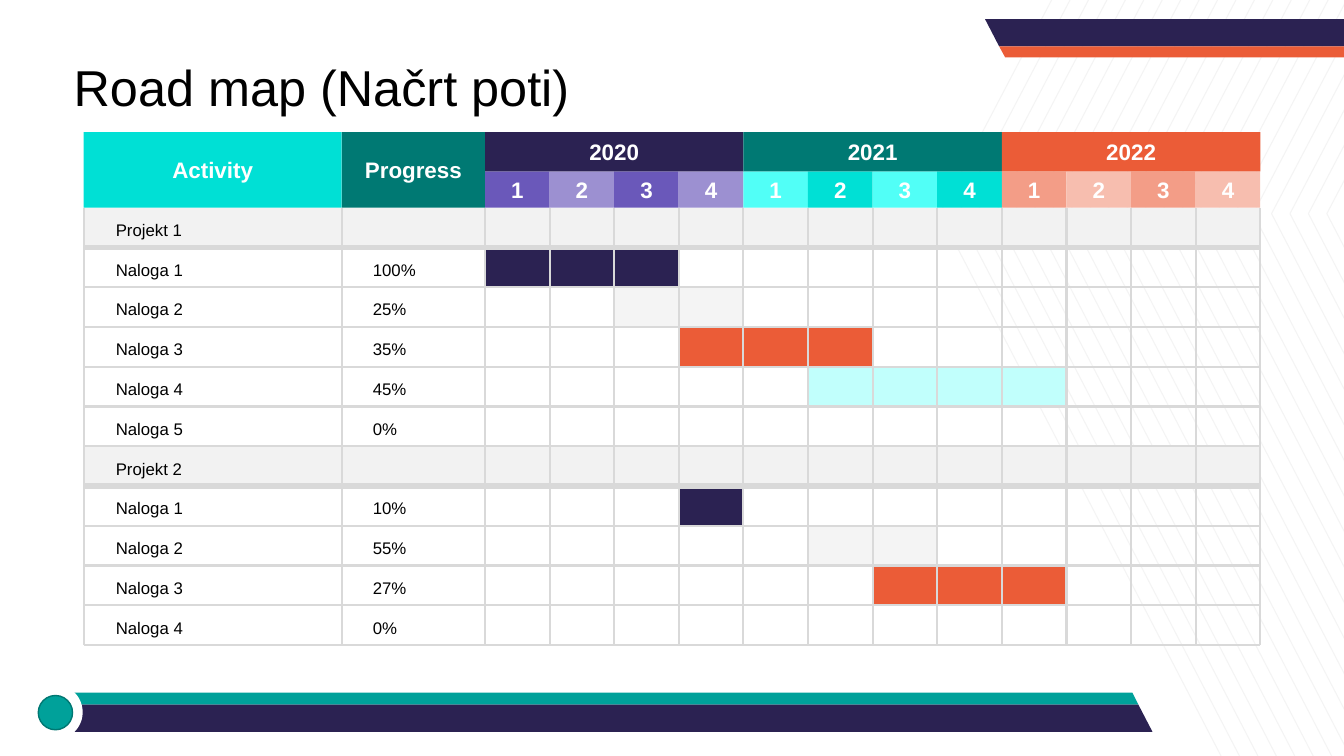
from lxml import etree
from pptx import Presentation
from pptx.dml.color import RGBColor
from pptx.enum import shapes, text
from pptx.oxml.ns import qn
from pptx.util import Inches, Pt

COLORS = {
    "white": "FFFFFF", "black": "000000", "navy": "2B2252", "orange": "EB5C37",
    "teal": "00A19A", "teal_edge": "007772", "dark_teal": "007973",
    "cyan": "00E0D5", "bright_cyan": "51FFF7", "pale_cyan": "C1FFFC",
    "violet": "6A58BA", "lilac": "9C90D1", "salmon": "F39D87", "peach": "F7BEAF",
    "pale_gray": "F4F4F4", "band": "F2F2F2", "grid": "D9D9D9",
}
RGB = {name: RGBColor.from_string(value) for name, value in COLORS.items()}

SLIDE_W, SLIDE_H = 13.33, 7.5
LEFT, PROGRESS_X, QUARTER_X, RIGHT = 0.83, 3.39, 4.81, 12.5
HEADER_TOP, QUARTER_TOP, BODY_TOP, BODY_BOTTOM = 1.31, 1.7, 2.06, 6.4
QUARTER_W = (RIGHT - QUARTER_X) / 12

# Activity, progress, bar colour, first quarter (0 to 11), number of quarters
ROWS = [
    ("Projekt 1", "", None, 0, 0),
    ("Naloga 1", "100%", "navy", 0, 3),
    ("Naloga 2", "25%", "pale_gray", 2, 2),
    ("Naloga 3", "35%", "orange", 3, 3),
    ("Naloga 4", "45%", "pale_cyan", 5, 4),
    ("Naloga 5", "0%", None, 0, 0),
    ("Projekt 2", "", None, 0, 0),
    ("Naloga 1", "10%", "navy", 3, 1),
    ("Naloga 2", "55%", "pale_gray", 5, 2),
    ("Naloga 3", "27%", "orange", 6, 3),
    ("Naloga 4", "0%", None, 0, 0),
]
YEARS = [
    ("2020", "navy", ("violet", "lilac")),
    ("2021", "dark_teal", ("bright_cyan", "cyan")),
    ("2022", "orange", ("salmon", "peach")),
]
ROW_H = (BODY_BOTTOM - BODY_TOP) / len(ROWS)

prs = Presentation()
prs.slide_width, prs.slide_height = Inches(SLIDE_W), Inches(SLIDE_H)
slide = prs.slides.add_slide(prs.slide_layouts[6])


def add_block(x, y, w, h, color, label="", kind=shapes.MSO_SHAPE.RECTANGLE):
    """Add a filled shape without outline, with an optional bold white label."""
    s = slide.shapes.add_shape(kind, Inches(x), Inches(y), Inches(w), Inches(h))
    s.shadow.inherit = False
    s.fill.solid()
    s.fill.fore_color.rgb = RGB[color]
    s.line.fill.background()
    if label:
        tf = s.text_frame
        tf.margin_left = tf.margin_right = tf.margin_top = tf.margin_bottom = 0
        tf.vertical_anchor = text.MSO_ANCHOR.MIDDLE
        tf.text = label
        p = tf.paragraphs[0]
        p.alignment = text.PP_ALIGN.CENTER
        f = p.runs[0].font
        f.name, f.size, f.bold, f.color.rgb = "Arial", Pt(16), True, RGB["white"]
    return s


def add_outline(points, closed):
    """Add a freeform through points given in inches."""
    points = [(Inches(x), Inches(y)) for x, y in points]
    builder = slide.shapes.build_freeform(*points[0], scale=1)
    builder.add_line_segments(points[1:], close=closed)
    s = builder.convert_to_shape()
    s.shadow.inherit = False
    return s


# Background chevrons, bleeding over the right edge of the slide
CHEVRONS, FIRST_X, LAST_X = 22, 9.32, 13.16
for i in range(CHEVRONS):
    x = FIRST_X + i * (LAST_X - FIRST_X) / (CHEVRONS - 1)
    s = add_outline([(x + 1.11, 0), (x, 2.12), (x + 2.79, SLIDE_H)], closed=False)
    s.fill.background()
    s.line.color.rgb = RGB["pale_gray"]
    s.line.width = Pt(0.75)

# Slanted ribbons at the top and bottom
for color, points in [
    ("teal", [(0.54, 6.87), (11.23, 6.87), (11.29, 6.99), (0.54, 6.99)]),
    ("navy", [(0.54, 6.99), (11.29, 6.99), (11.43, 7.26), (0.54, 7.26)]),
    ("navy", [(9.77, 0.19), (13.33, 0.19), (13.33, 0.46), (9.91, 0.46)]),
    ("orange", [(9.91, 0.46), (13.33, 0.46), (13.33, 0.57), (9.97, 0.57)]),
]:
    s = add_outline(points, closed=True)
    s.fill.solid()
    s.fill.fore_color.rgb = RGB[color]
    s.line.fill.background()

add_block(0.27, 6.79, 0.55, 0.55, "white", kind=shapes.MSO_SHAPE.OVAL)
dot = add_block(0.38, 6.9, 0.34, 0.34, "teal", kind=shapes.MSO_SHAPE.OVAL)
dot.line.color.rgb = RGB["teal_edge"]
dot.line.width = Pt(1)

# Project bands and task bars
for row, (activity, progress, color, first, count) in enumerate(ROWS):
    y = BODY_TOP + row * ROW_H
    if not progress:
        add_block(LEFT, y, RIGHT - LEFT, ROW_H, "band")
    if color:
        add_block(QUARTER_X + first * QUARTER_W, y, count * QUARTER_W, ROW_H, color)

# Table header
for i, (year, color, shades) in enumerate(YEARS):
    year_x = QUARTER_X + i * 4 * QUARTER_W
    for q in range(4):
        add_block(year_x + q * QUARTER_W, QUARTER_TOP, QUARTER_W,
                  BODY_TOP - QUARTER_TOP, shades[q % 2], str(q + 1))
    add_block(year_x, HEADER_TOP, 4 * QUARTER_W, QUARTER_TOP - HEADER_TOP, color, year)
header_h = BODY_TOP - HEADER_TOP
add_block(LEFT, HEADER_TOP, PROGRESS_X - LEFT, header_h, "cyan", "Activity")
add_block(PROGRESS_X, HEADER_TOP, QUARTER_X - PROGRESS_X, header_h, "dark_teal", "Progress")

# Grid lines, thicker below each project band
grid = []
for row, (activity, progress, *bar) in enumerate(ROWS):
    y = BODY_TOP + (row + 1) * ROW_H
    grid.append((LEFT, y, RIGHT, y, 1.5 if progress else 4))
for x in [LEFT, PROGRESS_X] + [QUARTER_X + q * QUARTER_W for q in range(13)]:
    grid.append((x, BODY_BOTTOM, x, BODY_TOP, 1.5))
for x1, y1, x2, y2, width in grid:
    c = slide.shapes.add_connector(shapes.MSO_CONNECTOR.STRAIGHT, Inches(x1),
                                   Inches(y1), Inches(x2), Inches(y2))
    c.line.color.rgb = RGB["grid"]
    c.line.width = Pt(width)
    etree.SubElement(c._element.spPr, qn("a:effectLst"))

# Activity names and progress values
for row, (activity, progress, *bar) in enumerate(ROWS):
    y = BODY_TOP + row * ROW_H + 0.07
    for x, w, label in [(1.05, 0.87, activity),
                        (3.6, 0.26 + 0.1 * len(progress), progress)]:
        if label:
            s = slide.shapes.add_textbox(Inches(x), Inches(y), Inches(w), Inches(0.3))
            tf = s.text_frame
            tf.word_wrap = False
            tf.auto_size = text.MSO_AUTO_SIZE.SHAPE_TO_FIT_TEXT
            tf.text = label
            f = tf.paragraphs[0].runs[0].font
            f.name, f.size, f.color.rgb = "Arial", Pt(12), RGB["black"]

title = slide.shapes.add_textbox(Inches(0.73), Inches(0.62), Inches(11.88), Inches(1.09))
tf = title.text_frame
tf.word_wrap = True
tf.margin_left = tf.margin_right = tf.margin_top = tf.margin_bottom = 0
tf.text = "Road map (Načrt poti)"
p = tf.paragraphs[0]
p.line_spacing = 0.9
f = p.runs[0].font
f.name, f.size, f.color.rgb = "Arial", Pt(36), RGB["black"]

prs.save("out.pptx")
